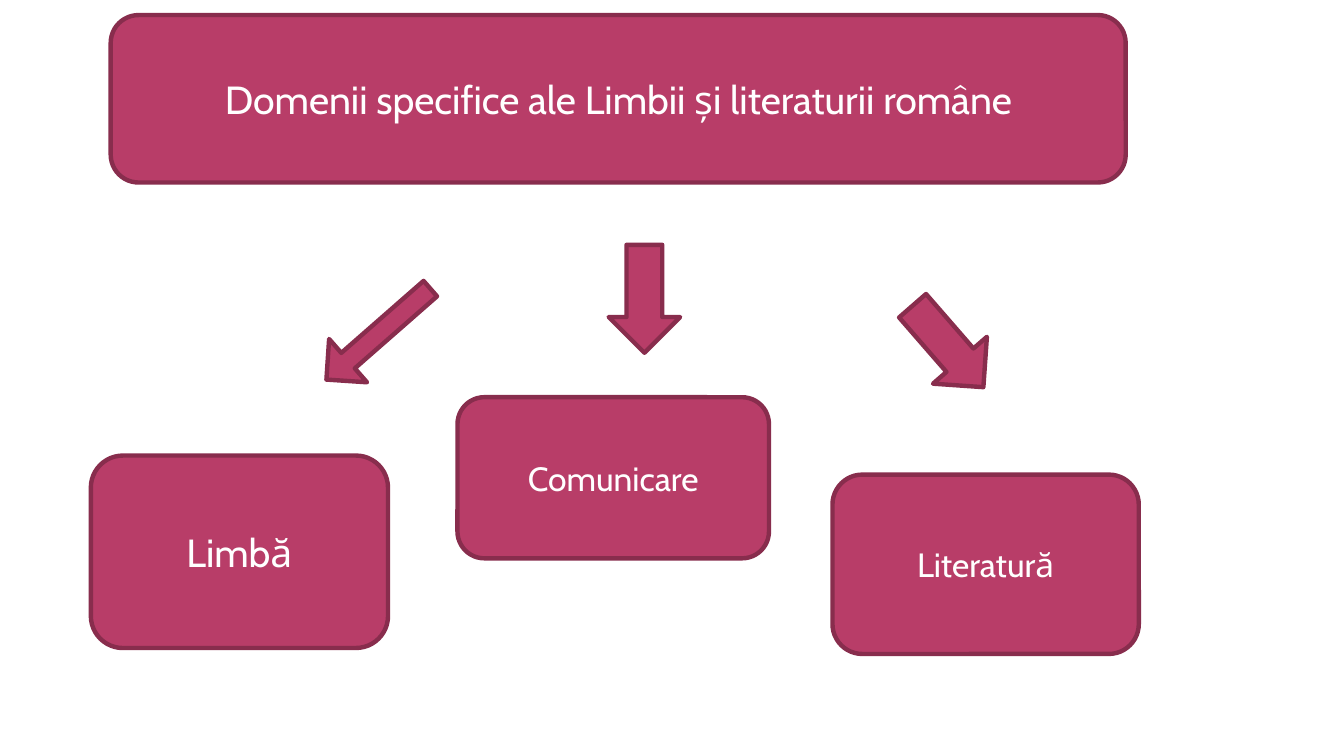
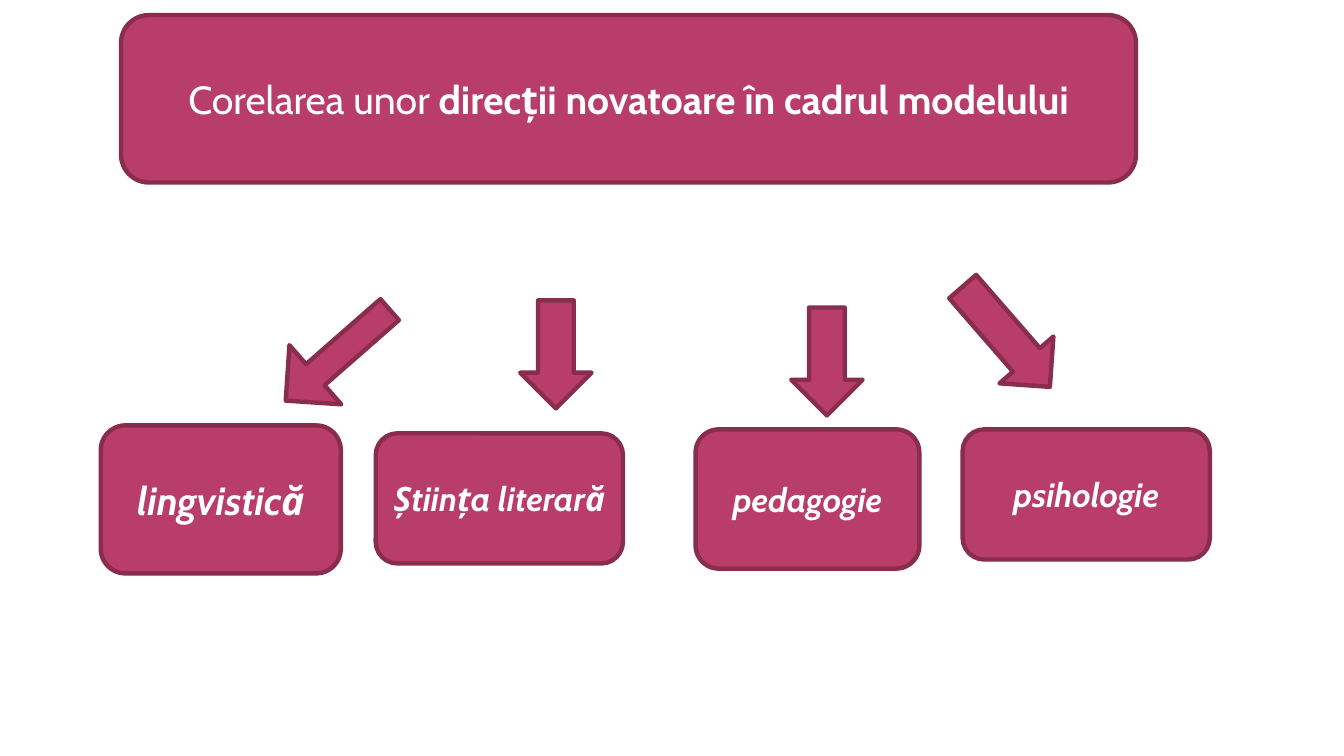
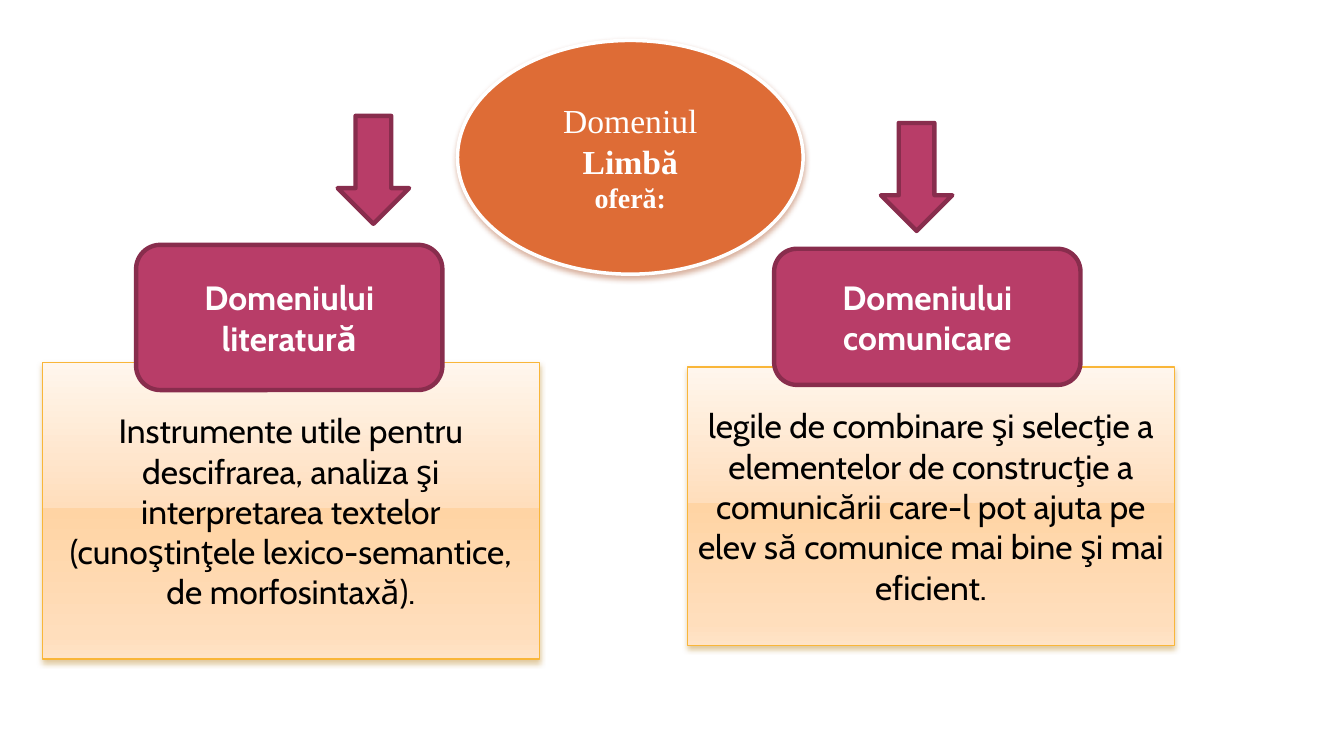
from pptx import Presentation
from pptx.dml.color import RGBColor
from pptx.enum.shapes import MSO_SHAPE
from pptx.enum.text import MSO_ANCHOR, MSO_AUTO_SIZE, PP_ALIGN
from pptx.oxml.xmlchemy import OxmlElement
from pptx.util import Cm, Pt

WHITE, BLACK = "FFFFFF", "000000"
BERRY, DARK_BERRY = "B83D68", "882D4D"
ORANGE, ORANGE_SHADE = "DE6C36", "9C3707"
AMBER, AMBER_SHADE = "F9B639", "B07405"
PEACH_STOPS = [(0, "FFF6ED"), (49, "FFDEBC"), (49, "FFD4A4"),
               (92, "FFDEBC"), (100, "FFE3C7")]
SANS, SERIF = "Cabin", "Times New Roman"


def rgb(value):
    return RGBColor.from_string(value)


def child(parent, tag, **attributes):
    """Append a DrawingML element with its attributes."""
    element = OxmlElement(tag)
    for key, value in attributes.items():
        element.set(key, str(value))
    parent.append(element)
    return element


class Deck:
    def __init__(self):
        self.prs = Presentation()
        self.prs.slide_width, self.prs.slide_height = Cm(33.87), Cm(19.05)
        self.slide = None

    def new_slide(self):
        self.slide = self.prs.slides.add_slide(self.prs.slide_layouts[5])

    # Shapes
    def shape(self, kind, at, fill=BERRY, line=DARK_BERRY, width=3.15):
        item = self.slide.shapes.add_shape(kind, *map(Cm, at))
        item.shadow.inherit = False
        if fill:
            item.fill.solid()
            item.fill.fore_color.rgb = rgb(fill)
        item.line.color.rgb = rgb(line)
        item.line.width = Pt(width)
        return item

    def soft_shadow(self, item, color):
        effects = item.element.spPr.find(
            "{http://schemas.openxmlformats.org/drawingml/2006/main}effectLst")
        shadow = child(effects, "a:outerShdw", blurRad=Pt(4), dist=Pt(2),
                       dir=5400000, rotWithShape=0)
        tint = child(shadow, "a:srgbClr", val=color)
        child(tint, "a:alpha", val=38000)

    def arrow(self, left, top, width=1.8, height=2.72, turn=0, shaft=0.5):
        item = self.shape(MSO_SHAPE.DOWN_ARROW, (left, top, width, height))
        item.rotation = turn
        item.adjustments[0] = shaft

    # Text: each paragraph is a list of (words, size, bold) runs
    def add_text(self, item, paragraphs, color=WHITE, font=SANS, italic=False):
        frame = item.text_frame
        frame.word_wrap = True
        frame.auto_size = MSO_AUTO_SIZE.NONE
        frame.vertical_anchor = MSO_ANCHOR.MIDDLE
        for index, runs in enumerate(paragraphs):
            paragraph = frame.add_paragraph() if index else frame.paragraphs[0]
            paragraph.alignment = PP_ALIGN.CENTER
            for words, size, bold in runs:
                run = paragraph.add_run()
                run.text = words
                run.font.name = font
                run.font.size = Pt(size)
                run.font.bold = bold
                run.font.italic = italic
                run.font.color.rgb = rgb(color)

    def title(self, backdrop, paragraphs, font=SANS, inset=0):
        """Lay the slide title over its backdrop shape."""
        title = self.slide.shapes.title
        title.left, title.top = backdrop.left + Cm(inset), backdrop.top
        title.width = backdrop.width - 2 * Cm(inset)
        title.height = backdrop.height
        backdrop.element.addnext(title.element)
        self.add_text(title, paragraphs, font=font)

    def banner(self, left, runs):
        backdrop = self.shape(MSO_SHAPE.ROUNDED_RECTANGLE,
                              (left, 0.38, 25.58, 4.22))
        self.title(backdrop, [runs])

    def box(self, words, at, size=24, bold=False, italic=False):
        item = self.shape(MSO_SHAPE.ROUNDED_RECTANGLE, at)
        self.add_text(item, [[(words, size, bold)]], italic=italic)

    def oval_title(self, at, paragraphs):
        oval = self.shape(MSO_SHAPE.OVAL, at, ORANGE, WHITE, 2.5)
        self.soft_shadow(oval, ORANGE_SHADE)
        self.title(oval, paragraphs, font=SERIF, inset=1.8)

    def panel(self, words, at):
        item = self.shape(MSO_SHAPE.RECTANGLE, at, None, AMBER, 0.9)
        item.fill.gradient()
        item.fill.gradient_angle = 270
        stops = item.element.spPr.find(
            ".//{http://schemas.openxmlformats.org/drawingml/2006/main}gsLst")
        for stop in list(stops):
            stops.remove(stop)
        for position, color in PEACH_STOPS:
            stop = child(stops, "a:gs", pos=position * 1000)
            child(stop, "a:srgbClr", val=color)
        self.soft_shadow(item, AMBER_SHADE)
        self.add_text(item, [[(words, 24, False)]], color=BLACK)


def domains(deck):
    deck.new_slide()
    deck.banner(2.79, [
        ("Domenii specifice ale Limbii și literaturii române", 28, False)])
    deck.arrow(8.81, 6.68, 1.45, 3.48, turn=48.8, shaft=0.356)
    deck.arrow(15.34, 6.17)
    deck.arrow(22.99, 7.37, turn=319)
    deck.box("Limbă", (2.29, 11.48, 7.49, 4.85), size=28)
    deck.box("Literatură", (20.98, 11.96, 7.72, 4.52))
    deck.box("Comunicare", (11.53, 10.01, 7.85, 4.06))


def directions(deck):
    deck.new_slide()
    deck.banner(3.05, [
        ("Corelarea unor ", 28, False),
        ("direcții novatoare în cadrul modelului", 28, True)])
    deck.arrow(7.52, 7.21, 1.98, 3.48, turn=48.8, shaft=0.356)
    deck.arrow(13.11, 7.57)
    deck.arrow(19.94, 7.75)
    deck.arrow(24.46, 6.81, height=3.35, turn=319)
    for words, size, at in [
            ("lingvistică", 28, (2.54, 10.72, 6.05, 3.73)),
            ("Știința literară", 24, (9.47, 10.92, 6.23, 3.28)),
            ("pedagogie", 24, (17.53, 10.82, 5.64, 3.51)),
            ("psihologie", 24, (24.26, 10.82, 6.23, 3.28))]:
        deck.box(words, at, size, bold=True, italic=True)


def language(deck):
    deck.new_slide()
    deck.oval_title((11.53, 1.02, 8.71, 5.89), [
        [("Domeniul ", 24, False), ("Limbă", 24, True)],
        [("oferă:", 20, True)]])
    deck.arrow(8.51, 2.92)
    deck.arrow(22.2, 3.1)
    deck.panel("Instrumente utile pentru descifrarea, analiza şi interpretarea "
               "textelor (cunoştinţele lexico-semantice, de morfosintaxă).",
               (1.07, 9.14, 12.52, 7.47))
    deck.panel("legile de combinare şi selecţie a elementelor de construcţie a "
               "comunicării care-l pot ajuta pe elev să comunice mai bine şi "
               "mai eficient.", (17.32, 9.25, 12.28, 7.01))
    deck.box("Domeniului literatură", (3.43, 6.17, 7.72, 3.66), bold=True)
    deck.box("Domeniului comunicare", (19.51, 6.27, 7.72, 3.43), bold=True)


def main():
    deck = Deck()
    for build in (domains, directions, language):
        build(deck)
    deck.prs.save("out.pptx")


if __name__ == "__main__":
    main()
